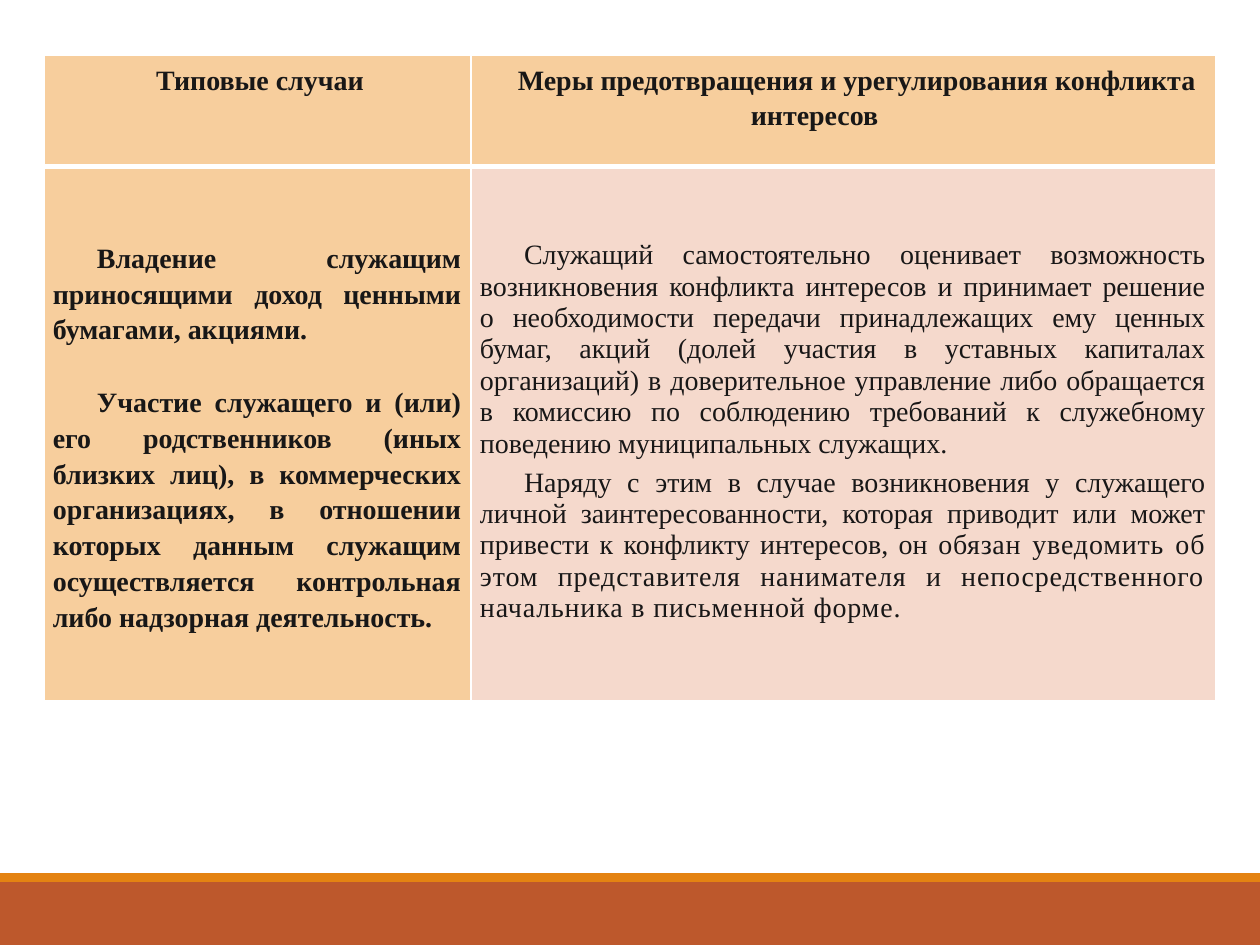
from lxml import etree
from pptx import Presentation
from pptx.dml.color import RGBColor
from pptx.enum.shapes import MSO_SHAPE
from pptx.enum.text import MSO_ANCHOR, PP_ALIGN
from pptx.oxml.ns import qn
from pptx.util import Inches, Pt

RECTANGLE = MSO_SHAPE.RECTANGLE
CENTER, JUSTIFY = PP_ALIGN.CENTER, PP_ALIGN.JUSTIFY
TOP, MIDDLE = MSO_ANCHOR.TOP, MSO_ANCHOR.MIDDLE

THEME = {
    "font": "Times New Roman",
    "size": Pt(16),
    "text": RGBColor.from_string("181717"),
    "border": "FFFFFF",
    "accent": RGBColor.from_string("F7CE9D"),
    "body": RGBColor.from_string("F5D9CC"),
    "footer": RGBColor.from_string("BD582C"),
    "stripe": RGBColor.from_string("E48312"),
}

COLUMNS = [3.39, 5.91]
ROWS = [0.88, 4.24]
TABLE_LEFT, TABLE_TOP = 0.35, 0.44

# Each paragraph is a list of (text, letter spacing in points)
CASES = [
    [("Владение служащим приносящими доход ценными бумагами, акциями.", 0)],
    [("Участие служащего и (или) его родственников (иных близких лиц), "
      "в коммерческих организациях, в отношении которых данным служащим "
      "осуществляется контрольная либо надзорная деятельность. ", 0)],
]
MEASURES = [
    [("Cлужащий самостоятельно оценивает возможность возникновения конфликта "
      "интересов и принимает решение о необходимости передачи принадлежащих ему "
      "ценных бумаг, акций (долей участия в уставных капиталах организаций) "
      "в доверительное управление либо обращается в комиссию по соблюдению "
      "требований к служебному поведению муниципальных служащих.", 0)],
    [("Наряду с этим в случае возникновения у служащего личной "
      "заинтересованности, которая приводит или может привести к конфликту "
      "интересов, он ", 0),
     ("обязан ", 0.4),
     ("уведомить об этом представителя нанимателя и непосредственного "
      "начальника в письменной форме.", 0.5)],
]
HEADER = {"align": CENTER, "anchor": TOP, "left": 0.04, "indent": 0.18, "bold": True,
          "line": 1.15, "after": 0, "inset": 0.04, "fill": THEME["accent"]}
CASE = HEADER | {"align": JUSTIFY, "anchor": MIDDLE, "left": 0, "indent": 0.35,
                 "after": 21}
MEASURE = CASE | {"anchor": TOP, "bold": False, "line": 1.01, "after": 4.3,
                  "inset": 0.58, "fill": THEME["body"]}
CELLS = [
    [([[("Типовые случаи \t", 0)]], HEADER),
     ([[("Меры предотвращения и урегулирования конфликта интересов \t", 0)]], HEADER)],
    [(CASES, CASE), (MEASURES, MEASURE)],
]


def set_borders(cell, widths):
    """Draw the cell's edges; widths are points for left, right, top, bottom."""
    properties = cell._tc.get_or_add_tcPr()
    for position, (edge, width) in enumerate(zip("LRTB", widths)):
        line = etree.Element(qn(f"a:ln{edge}"), w=str(Pt(width)))
        fill = etree.SubElement(line, qn("a:solidFill"))
        etree.SubElement(fill, qn("a:srgbClr"), val=THEME["border"])
        properties.insert(position, line)


prs = Presentation()
prs.slide_width, prs.slide_height = Inches(10), Inches(7.5)
slide = prs.slides.add_slide(prs.slide_layouts[6])

for top, height, color in [(7, 0.5, THEME["footer"]), (6.93, 0.07, THEME["stripe"])]:
    band = slide.shapes.add_shape(RECTANGLE, 0, Inches(top), prs.slide_width, Inches(height))
    band.fill.solid()
    band.fill.fore_color.rgb = color
    band.line.fill.background()
    band.shadow.inherit = False

table = slide.shapes.add_table(
    len(ROWS), len(COLUMNS), Inches(TABLE_LEFT), Inches(TABLE_TOP),
    Inches(sum(COLUMNS)), Inches(sum(ROWS))).table
table.first_row = table.horz_banding = False
for column, width in zip(table.columns, COLUMNS):
    column.width = Inches(width)
for row, height in zip(table.rows, ROWS):
    row.height = Inches(height)

for r, row_cells in enumerate(CELLS):
    for c, (paragraphs, style) in enumerate(row_cells):
        cell = table.cell(r, c)
        cell.fill.solid()
        cell.fill.fore_color.rgb = style["fill"]
        cell.vertical_anchor = style["anchor"]
        cell.margin_left, cell.margin_right = Inches(0.07), Inches(0.08)
        cell.margin_top, cell.margin_bottom = Inches(style["inset"]), 0
        set_borders(cell, [1, 1, 1, 3] if r == 0 else [1, 1, 3, 1])

        for i, runs in enumerate(paragraphs):
            frame = cell.text_frame
            paragraph = frame.add_paragraph() if i else frame.paragraphs[0]
            paragraph.alignment = style["align"]
            paragraph.line_spacing = style["line"]
            last = i == len(paragraphs) - 1
            paragraph.space_after = Pt(0 if last else style["after"])
            indents = paragraph._p.get_or_add_pPr()
            indents.set("marL", str(Inches(style["left"])))
            indents.set("indent", str(Inches(style["indent"])))
            font = paragraph.font
            font.name, font.size, font.bold = THEME["font"], THEME["size"], style["bold"]
            font.color.rgb = THEME["text"]
            for text, spacing in runs:
                run = paragraph.add_run()
                run.text = text
                if spacing:
                    run.font._element.set("spc", str(round(spacing * 100)))

prs.save("out.pptx")
